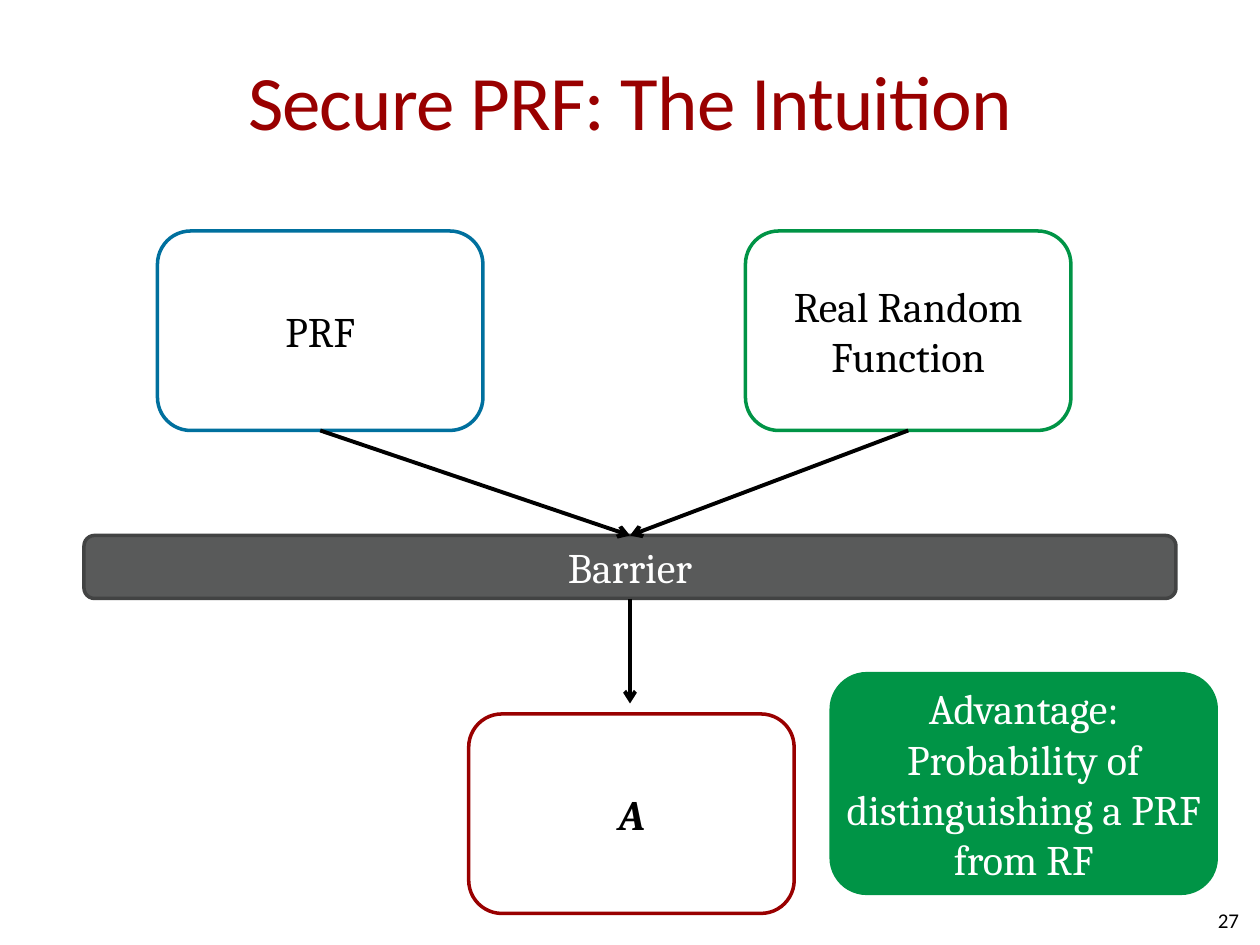
from pptx import Presentation
from pptx.dml.color import RGBColor
from pptx.enum.shapes import MSO_CONNECTOR as Connector, MSO_SHAPE as Shape
from pptx.enum.text import MSO_ANCHOR as Anchor, PP_ALIGN as Align
from pptx.oxml.ns import qn
from pptx.util import Inches, Pt
from lxml.etree import SubElement

COLORS = {
    "black": "000000", "white": "FFFFFF", "red": "990000", "blue": "00709E",
    "green": "009446", "gray": "595A5A", "dark_gray": "424343",
}
CELL = Inches(1) / 12  # the grid has 120 columns and 90 rows
TOP, BOTTOM = 0, 2  # connection sites


def grid(*cells):
    return [round(cell * CELL) for cell in cells]


def rgb(name):
    return RGBColor.from_string(COLORS[name])


def write(holder, lines, size, font, color, align=Align.CENTER, **style):
    frame = holder.text_frame
    frame.word_wrap = True
    frame.vertical_anchor = Anchor.MIDDLE
    frame.margin_left = frame.margin_right = 0
    frame.margin_top = frame.margin_bottom = 0
    paragraph = frame.paragraphs[0]
    paragraph.alignment = align
    for index, line in enumerate(lines):
        if index:
            paragraph.add_line_break()
        run = paragraph.add_run()
        run.text = line
        run.font.size, run.font.name = Pt(size), font
        run.font.color.rgb = rgb(color)
        run.font.bold = style.get("bold", False)
        run.font.italic = style.get("italic", False)
        if "spacing" in style:
            run.font._element.set("spc", str(style["spacing"]))


def add_title(slide, box):
    title = slide.shapes.add_textbox(*grid(*box))
    write(title, ["Secure PRF: The Intuition"], 44, "Calibri", "red", spacing=-50)


def add_page_number(slide, box):
    number = slide.shapes.add_textbox(*grid(*box))
    write(number, ["27"], 12, "Calibri", "black", Align.RIGHT)


def add_block(slide, box, lines, fill="white", line=None, color="black", **style):
    block = slide.shapes.add_shape(Shape.ROUNDED_RECTANGLE, *grid(*box))
    block.shadow.inherit = False
    block.fill.solid()
    block.fill.fore_color.rgb = rgb(fill)
    if line:
        block.line.color.rgb = rgb(line)
        block.line.width = Pt(2)
    else:
        block.line.fill.background()
    write(block, lines, 24, "Cambria", color, **style)
    return block


def add_arrow(slide, source, target=None, end=(0, 0)):
    arrow = slide.shapes.add_connector(Connector.STRAIGHT, 0, 0, *grid(*end))
    arrow.begin_connect(source, BOTTOM)
    if target is not None:
        arrow.end_connect(target, TOP)
    arrow.line.color.rgb = rgb("black")
    arrow.line.width = Pt(2.25)
    SubElement(arrow.line._get_or_add_ln(), qn("a:tailEnd"), type="arrow")
    SubElement(arrow._element.spPr, qn("a:effectLst"))


def add_experiment(slide, box):
    left, top, width, height = box
    middle = left + width / 2
    block_size = (31, 19)

    # The two functions above the barrier
    prf = add_block(slide, (left + 7, top, *block_size), ["PRF"], line="blue")
    random_function = add_block(slide, (left + 63, top, *block_size),
                                ["Real Random Function"], line="green")
    barrier = add_block(slide, (left, top + 29, width, 6), ["Barrier"],
                        "gray", "dark_gray", "white")

    # Answers pass through the barrier to the adversary
    for function in (prf, random_function):
        add_arrow(slide, function, barrier)
    add_arrow(slide, barrier, end=(middle, top + 45))
    add_block(slide, (left + 36.64, top + height - 19, *block_size), ["A"],
              line="red", bold=True, italic=True)


def add_advantage(slide, box):
    add_block(slide, box,
              ["Advantage:", "Probability of distinguishing a PRF from RF"],
              "green", color="white")


def main():
    deck = Presentation()
    deck.slide_width, deck.slide_height = grid(120, 90)
    slide = deck.slides.add_slide(deck.slide_layouts[6])
    add_title(slide, (6, 2, 108, 15))
    add_page_number(slide, (90, 85.2, 28, 4.8))
    add_experiment(slide, (8, 22, 104, 65))
    add_advantage(slide, (79, 64, 37, 21.25))
    deck.save("out.pptx")


if __name__ == "__main__":
    main()
